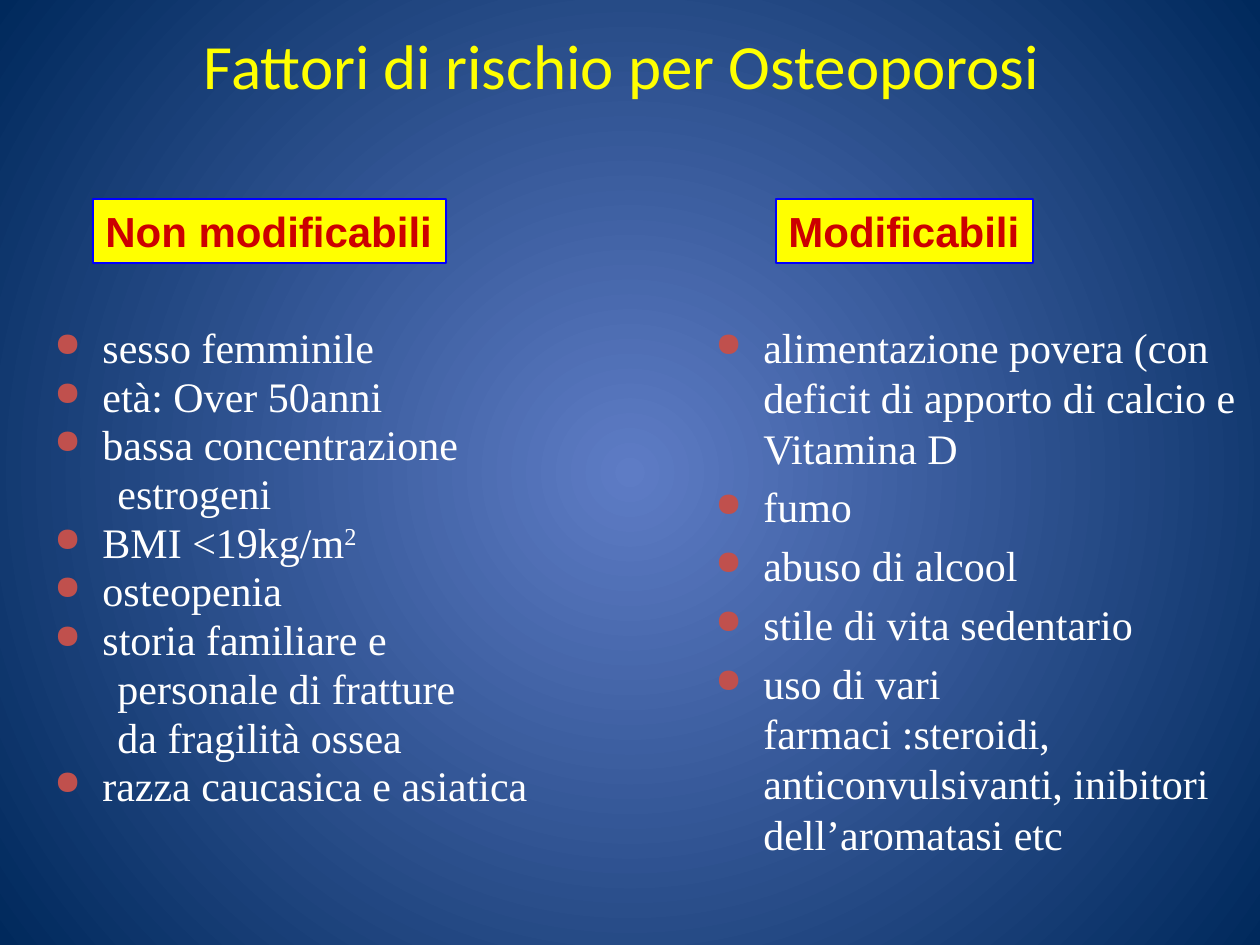
from dataclasses import dataclass

from lxml import etree
from pptx import Presentation
from pptx.dml.color import RGBColor
from pptx.enum.shapes import MSO_SHAPE
from pptx.enum.text import MSO_ANCHOR, MSO_AUTO_SIZE, PP_ALIGN
from pptx.oxml.ns import qn
from pptx.util import Emu, Pt

RECT = MSO_SHAPE.RECTANGLE
MIDDLE = MSO_ANCHOR.MIDDLE
LEFT, CENTER = PP_ALIGN.LEFT, PP_ALIGN.CENTER
GROW = MSO_AUTO_SIZE.SHAPE_TO_FIT_TEXT
PX = 914400 // 126


@dataclass(frozen=True)
class Theme:
    glow: str = "5E7CC5"
    edge: str = "00295C"
    yellow: str = "FFFF00"
    red: str = "CC0000"
    border: str = "0000FF"
    white: str = "FFFFFF"
    bullet: str = "C0504D"
    title_font: str = "Calibri"
    label_font: str = "Arial"
    body_font: str = "Times New Roman"
    title_size: int = 36
    body_size: int = 24


def px(n):
    return Emu(n * PX)


def rgb(color):
    return RGBColor.from_string(color)


class SlideBuilder:
    def __init__(self, s, theme):
        self.s = s
        self.theme = theme

    def background(self):
        """Radial gradient from a bright centre to dark corners."""
        fill = self.s.background.fill
        fill.gradient()
        for stop, color in zip(fill.gradient_stops, (self.theme.glow, self.theme.edge)):
            stop.color.rgb = rgb(color)
        grad = next(self.s.element.iter(qn("a:gradFill")))
        grad.remove(grad.find(qn("a:lin")))
        circle = etree.SubElement(grad, qn("a:path"), path="circle")
        etree.SubElement(circle, qn("a:fillToRect"), l="50000", t="50000", r="50000", b="50000")

    def style(self, p, font, size, color, bold=False):
        for r in p.runs:
            r.font.name = font
            r.font.size = Pt(size)
            r.font.bold = bold
            r.font.color.rgb = rgb(color)

    def title(self, text, x, y, w, h):
        t = self.theme
        tf = self.s.shapes.add_textbox(px(x), px(y), px(w), px(h)).text_frame
        tf.word_wrap = True
        tf.vertical_anchor = MIDDLE
        tf.margin_bottom = px(77)
        tf.margin_right = px(28)
        p = tf.paragraphs[0]
        p.text = text
        p.alignment = CENTER
        self.style(p, t.title_font, t.title_size, t.yellow)

    def label(self, text, x, y, w, h):
        t = self.theme
        sp = self.s.shapes.add_shape(RECT, px(x), px(y), px(w), px(h))
        sp.shadow.inherit = False
        sp.fill.solid()
        sp.fill.fore_color.rgb = rgb(t.yellow)
        sp.line.color.rgb = rgb(t.border)
        sp.line.width = Pt(0.75)
        tf = sp.text_frame
        tf.word_wrap = False
        tf.auto_size = GROW
        p = tf.paragraphs[0]
        p.text = text
        p.alignment = LEFT
        self.style(p, t.label_font, t.body_size, t.red, bold=True)

    def bullet(self, p):
        pPr = p._p.get_or_add_pPr()
        pPr.set("marL", str(px(48)))
        pPr.set("indent", str(px(-48)))
        color = etree.SubElement(pPr, qn("a:buClr"))
        etree.SubElement(color, qn("a:srgbClr"), val=self.theme.bullet)
        etree.SubElement(pPr, qn("a:buSzPct"), val="80000")
        etree.SubElement(pPr, qn("a:buChar"), char="●")

    def bullets(self, items, x, y, w, h, spacing):
        """Each item is a list of lines; lines after the first are indented without a bullet.

        A line may be a (text, superscript) pair.
        """
        t = self.theme
        tf = self.s.shapes.add_textbox(px(x), px(y), px(w), px(h)).text_frame
        tf.word_wrap = True
        p = None
        for item in items:
            for i, line in enumerate(item):
                first = p is None
                p = tf.paragraphs[0] if first else tf.add_paragraph()
                text, power = line if isinstance(line, tuple) else (line, "")
                p.text = text
                if i == 0:
                    self.bullet(p)
                else:
                    p._p.get_or_add_pPr().set("marL", str(px(63)))
                p.line_spacing = spacing
                p.space_before = Pt(0 if first else 4.8)
                if power:
                    r = p.add_run()
                    r.text = power
                    r.font._element.set("baseline", "30000")
                self.style(p, t.body_font, t.body_size, t.white)


FIXED = [
    ["sesso femminile"],
    ["età: Over 50anni"],
    ["bassa concentrazione", "estrogeni"],
    [("BMI <19kg/m", "2")],
    ["osteopenia"],
    ["storia familiare e", "personale di fratture", "da fragilità ossea"],
    ["razza caucasica e asiatica"],
]
MODIFIABLE = [
    ["alimentazione povera (con deficit di apporto di calcio e Vitamina D"],
    ["fumo"],
    ["abuso di alcool"],
    ["stile di vita sedentario"],
    ["uso di vari\vfarmaci :steroidi, anticonvulsivanti, inibitori dell’aromatasi etc"],
]


def main():
    prs = Presentation()
    prs.slide_width, prs.slide_height = px(1260), px(945)
    slide = SlideBuilder(prs.slides.add_slide(prs.slide_layouts[6]), Theme())
    slide.background()
    slide.bullets(FIXED, 42, 325, 588, 552, 0.8)
    slide.bullets(MODIFIABLE, 703, 315, 557, 665, 1.0)
    slide.label("Non modificabili", 93, 199, 353, 64)
    slide.label("Modificabili", 776, 199, 257, 64)
    slide.title("Fattori di rischio per Osteoporosi", 94, 42, 1071, 116)
    prs.save("out.pptx")


if __name__ == "__main__":
    main()
